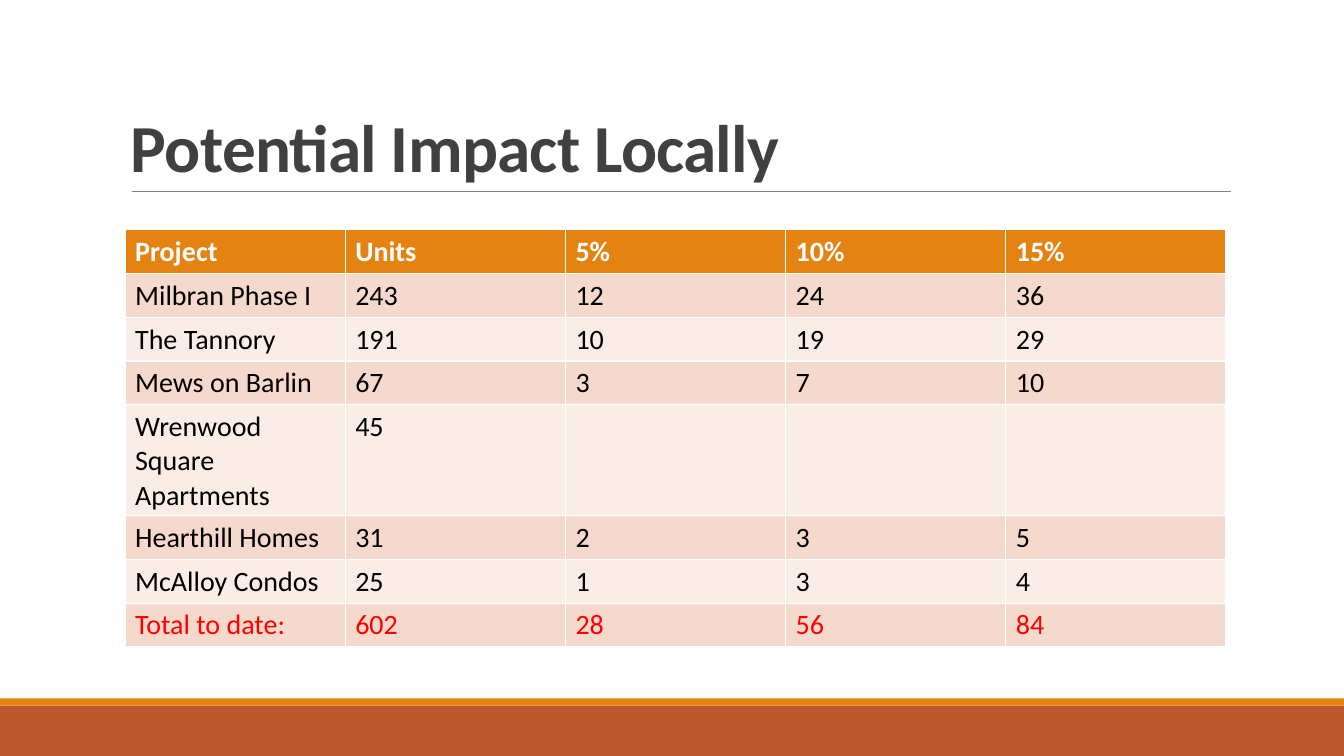
import pptx
import pptx.util
import pptx.dml.color
import pptx.enum.shapes
import pptx.enum.text
import lxml.etree

Inches = pptx.util.Inches
COLORS = {
    "rust": "BD582C", "orange": "E48312", "rule": "808080", "title": "404040",
    "white": "FFFFFF", "black": "000000", "red": "FF0000",
    "band_dark": "F5D9CC", "band_light": "FAEDE7",
}
ROWS = [
    ["Project", "Units", "5%", "10%", "15%"],
    ["Milbran Phase I", "243", "12", "24", "36"],
    ["The Tannory", "191", "10", "19", "29"],
    ["Mews on Barlin", "67", "3", "7", "10"],
    ["Wrenwood Square Apartments", "45", "", "", ""],
    ["Hearthill Homes", "31", "2", "3", "5"],
    ["McAlloy Condos", "25", "1", "3", "4"],
    ["Total to date:", "602", "28", "56", "84"],
]


def rgb(name):
    return pptx.dml.color.RGBColor.from_string(COLORS[name])


def add_run(p, text, size, color, bold):
    r = p.add_run()
    r.text = text
    r.font.name = "Calibri"
    r.font.size = pptx.util.Pt(size)
    r.font.bold = bold
    r.font.color.rgb = rgb(color)
    return r


prs = pptx.Presentation()
prs.slide_width = Inches(13.33)
prs.slide_height = Inches(7.5)
slide = prs.slides.add_slide(prs.slide_layouts[6])

for top, height, color in [(7, 0.5, "rust"), (6.93, 0.07, "orange")]:
    sp = slide.shapes.add_shape(
        pptx.enum.shapes.MSO_SHAPE.RECTANGLE,
        0, Inches(top), prs.slide_width, Inches(height))
    sp.shadow.inherit = False
    sp.fill.solid()
    sp.fill.fore_color.rgb = rgb(color)
    sp.line.fill.background()

rule = slide.shapes.add_connector(
    pptx.enum.shapes.MSO_CONNECTOR.STRAIGHT,
    Inches(1.31), Inches(1.9), Inches(12.21), Inches(1.9))
rule.line.color.rgb = rgb("rule")
rule.line.width = pptx.util.Pt(0.5)
lxml.etree.SubElement(rule._element.spPr, pptx.oxml.ns.qn("a:effectLst"))

title = slide.shapes.add_textbox(Inches(1.2), Inches(0.31), Inches(11), Inches(1.59))
tf = title.text_frame
tf.word_wrap = True
tf.vertical_anchor = pptx.enum.text.MSO_ANCHOR.BOTTOM
p = tf.paragraphs[0]
p.line_spacing = 0.85
r = add_run(p, "Potential Impact Locally", 48, "title", True)
r.font._element.set("spc", "-50")

frame = slide.shapes.add_table(
    len(ROWS), len(ROWS[0]), Inches(1.24), Inches(2.28), Inches(10.92), Inches(4.09))
table = frame.table
for i, values in enumerate(ROWS):
    header, total = i == 0, i == len(ROWS) - 1
    fill = "orange" if header else "band_dark" if i % 2 else "band_light"
    color = "white" if header else "red" if total else "black"
    table.rows[i].height = Inches(0.67 if i == 4 else 0.39)
    for j, value in enumerate(values):
        cell = table.cell(i, j)
        cell.fill.solid()
        cell.fill.fore_color.rgb = rgb(fill)
        if value:
            add_run(cell.text_frame.paragraphs[0], value, 20, color, header)
frame.height = Inches(4.09)

prs.save("out.pptx")
